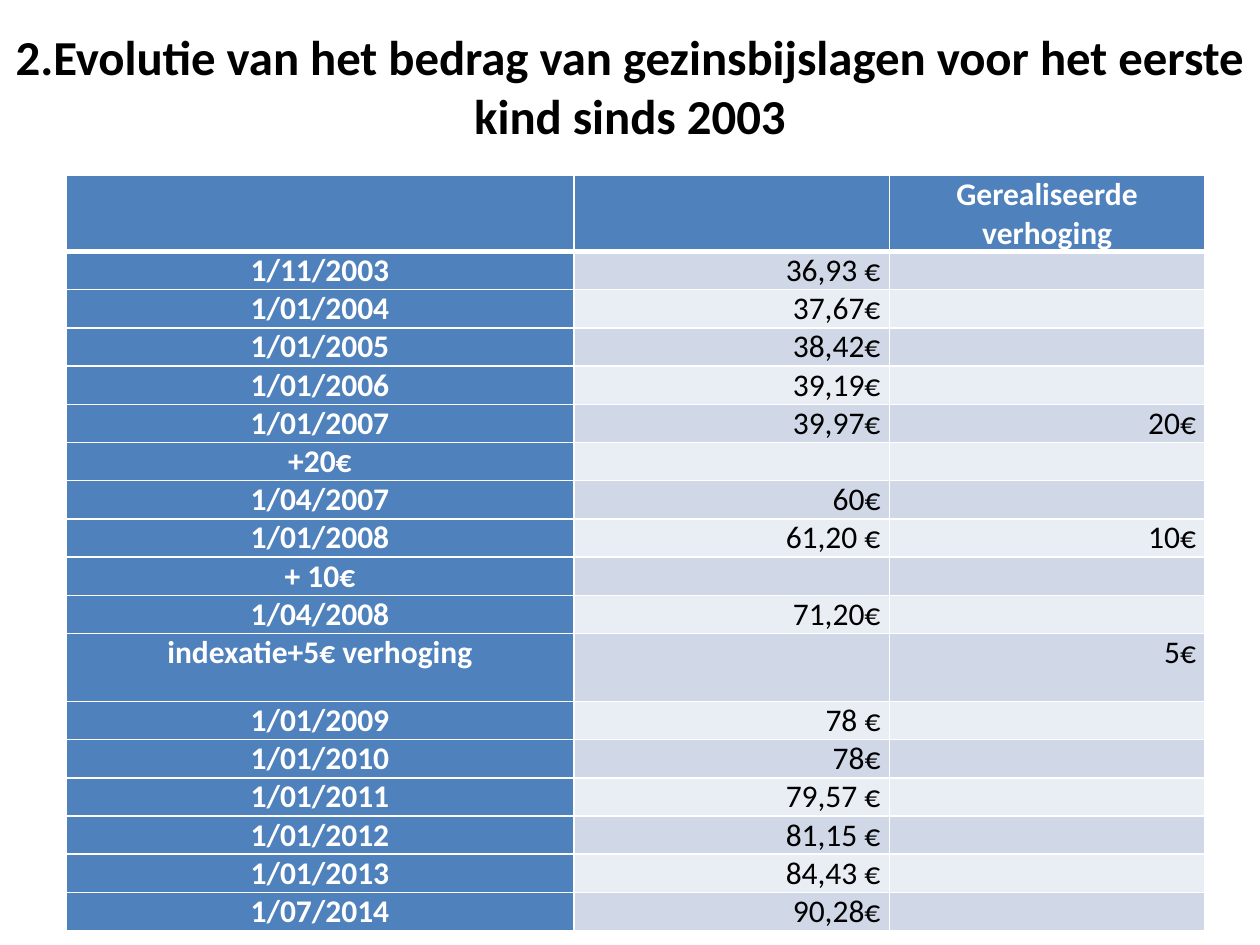
import pptx
import pptx.dml.color
import pptx.enum.text
import pptx.oxml
import pptx.oxml.ns
import pptx.util

Cm = pptx.util.Cm
Pt = pptx.util.Pt
ALIGN = pptx.enum.text.PP_ALIGN
ANCHOR = pptx.enum.text.MSO_ANCHOR

COLORS = {
    "blue": "4F81BD",
    "band_dark": "D0D8E8",
    "band_light": "E9EDF4",
    "white": "FFFFFF",
    "black": "000000",
}

ROWS = [
    ("", "", "Gerealiseerde verhoging"),
    ("1/11/2003", "36,93 €", ""),
    ("1/01/2004", "37,67€", ""),
    ("1/01/2005", "38,42€", ""),
    ("1/01/2006", "39,19€", ""),
    ("1/01/2007", "39,97€", "20€"),
    ("+20€", "", ""),
    ("1/04/2007", "60€", ""),
    ("1/01/2008", "61,20 €", "10€"),
    ("+ 10€", "", ""),
    ("1/04/2008", "71,20€", ""),
    ("indexatie+5€ verhoging", "", "5€"),
    ("1/01/2009", "78 €", ""),
    ("1/01/2010", "78€", ""),
    ("1/01/2011", "79,57 €", ""),
    ("1/01/2012", "81,15 €", ""),
    ("1/01/2013", "84,43 €", ""),
    ("1/07/2014", "90,28€", ""),
]
COLUMN_WIDTHS = [10.24, 6.36, 6.36]
ROW_HEIGHT = 0.77
TALL_ROWS = {0: 1.53, 11: 1.37}  # header and index row


def add_text(paragraph, text, size, color, bold, align):
    paragraph.alignment = align
    run = paragraph.add_run()
    run.text = text
    run.font.name = "Calibri"
    run.font.size = Pt(size)
    run.font.bold = bold
    run.font.color.rgb = pptx.dml.color.RGBColor.from_string(COLORS[color])


def add_border(cell, side, width):
    cell.fill.background()
    properties = cell._tc.get_or_add_tcPr()
    line = pptx.oxml.parse_xml(
        f'<a:ln{side} {pptx.oxml.ns.nsdecls("a")} w="{Pt(width)}"><a:solidFill>'
        f'<a:srgbClr val="{COLORS["white"]}"/></a:solidFill></a:ln{side}>'
    )
    properties.insert(len(properties) - 1, line)  # borders precede the fill


presentation = pptx.Presentation()
presentation.slide_width = Cm(25.4)
presentation.slide_height = Cm(19.05)
slide = presentation.slides.add_slide(presentation.slide_layouts[6])

# Title
title = slide.shapes.add_textbox(Cm(0), Cm(0.33), Cm(25.4), Cm(2.8))
title.text_frame.word_wrap = True
title.text_frame.vertical_anchor = ANCHOR.MIDDLE
add_text(
    title.text_frame.paragraphs[0],
    "2.Evolutie van het bedrag van gezinsbijslagen voor het eerste kind sinds 2003",
    27.9, "black", True, ALIGN.CENTER,
)

# Table grid
heights = [TALL_ROWS.get(index, ROW_HEIGHT) for index in range(len(ROWS))]
table = slide.shapes.add_table(
    len(ROWS), len(COLUMN_WIDTHS), Cm(1.33), Cm(3.54),
    Cm(sum(COLUMN_WIDTHS)), Cm(sum(heights)),
).table
for column, width in zip(table.columns, COLUMN_WIDTHS):
    column.width = Cm(width)
for row, height in zip(table.rows, heights):
    row.height = Cm(height)

# Table cells
for row_index, texts in enumerate(ROWS):
    for column_index, text in enumerate(texts):
        cell = table.cell(row_index, column_index)
        cell.margin_left = cell.margin_right = Cm(0.18)
        cell.margin_top = cell.margin_bottom = 0

        # The line under the header is thicker
        for side in "LRTB":
            under_header = (row_index, side) in [(0, "B"), (1, "T")]
            add_border(cell, side, 3 if under_header else 1)

        heading = row_index == 0 or column_index == 0
        band = "band_dark" if row_index % 2 else "band_light"
        cell.fill.solid()
        cell.fill.fore_color.rgb = pptx.dml.color.RGBColor.from_string(
            COLORS["blue" if heading else band]
        )
        if text:
            add_text(
                cell.text_frame.paragraphs[0], text, 18,
                "white" if heading else "black", heading,
                ALIGN.CENTER if heading else ALIGN.RIGHT,
            )

presentation.save("out.pptx")
